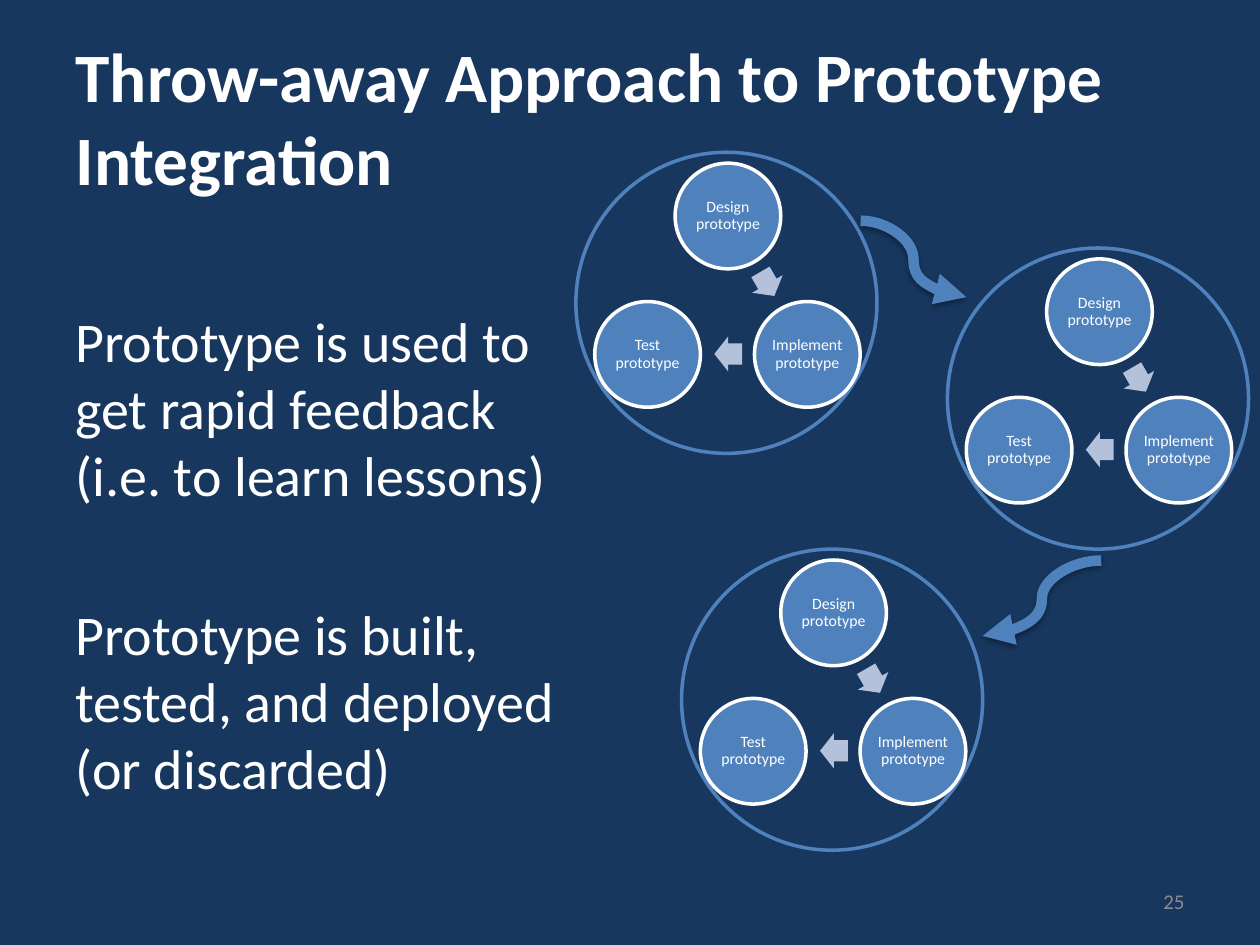
from lxml import etree
from pptx import Presentation
from pptx.dml.color import RGBColor
from pptx.enum.dml import MSO_LINE
from pptx.enum.shapes import MSO_CONNECTOR, MSO_SHAPE
from pptx.enum.text import MSO_ANCHOR, MSO_AUTO_SIZE, PP_ALIGN
from pptx.oxml import parse_xml
from pptx.oxml.ns import nsdecls, qn
from pptx.util import Cm, Pt

OVAL, ARROW = MSO_SHAPE.OVAL, MSO_SHAPE.RIGHT_ARROW
CURVE, SOLID = MSO_CONNECTOR.CURVE, MSO_LINE.SOLID
TOP, MIDDLE = MSO_ANCHOR.TOP, MSO_ANCHOR.MIDDLE
LEFT, CENTER, RIGHT = PP_ALIGN.LEFT, PP_ALIGN.CENTER, PP_ALIGN.RIGHT
NO_AUTOFIT = MSO_AUTO_SIZE.NONE
TITLE_ONLY = 5

COLORS = {
    "background": "17375E",
    "blue": "4F81BD",
    "pale": "B3C1DB",
    "white": "FFFFFF",
    "grey": "8C8C8C",
}
RING_SIZE, NODE_SIZE = 6.07, 2.13
RINGS = [(11.61, 3.07), (19.1, 5.0), (13.74, 11.07)]
NODES = [
    ("Design prototype", 2.0, 0.22),
    ("Implement prototype", 3.6, 3.01),
    ("Test prototype", 0.38, 3.01),
]
STEP_ARROWS = [(3.58, 2.3, 60), (2.79, 3.71, 180)]
RING_LINKS = [(17.35, 4.45, 19.48, 5.99), (22.2, 11.3, 19.81, 12.82)]
SHADOW = (
    f'<a:effectLst {nsdecls("a")}><a:outerShdw blurRad="40000" dist="23000" '
    'dir="5400000" rotWithShape="0"><a:srgbClr val="000000">'
    '<a:alpha val="35000"/></a:srgbClr></a:outerShdw></a:effectLst>'
)


def color(name):
    return RGBColor.from_string(COLORS[name])


def apply(target, **values):
    for name, value in values.items():
        setattr(target, name, value)


def place(shape, left, top, width, height):
    apply(shape, left=Cm(left), top=Cm(top), width=Cm(width), height=Cm(height))


def write(box, texts, size, ink="white", bold=False, anchor=TOP, **para_format):
    frame = box.text_frame
    apply(frame, word_wrap=True, auto_size=NO_AUTOFIT, vertical_anchor=anchor)
    for index, text in enumerate(texts):
        para = frame.add_paragraph() if index else frame.paragraphs[0]
        apply(para, **para_format)
        span = para.add_run()
        apply(span, text=text)
        apply(span.font, name="Calibri", size=Pt(size), bold=bold)
        span.font.color.rgb = color(ink)
    return frame


def add_figure(shapes, kind, left, top, width, height, fill=None, line=None):
    figure = shapes.add_shape(kind, Cm(left), Cm(top), Cm(width), Cm(height))
    figure.shadow.inherit = False
    if fill:
        figure.fill.solid()
        figure.fill.fore_color.rgb = color(fill)
    else:
        figure.fill.background()
    if line:
        figure.line.color.rgb = color(line)
        figure.line.width = Pt(2)
    else:
        figure.line.fill.background()
    return figure


def add_node(shapes, text, left, top):
    node = add_figure(shapes, OVAL, left, top, NODE_SIZE, NODE_SIZE, "blue", "white")
    frame = write(node, [text], 9, anchor=MIDDLE, alignment=CENTER,
                  line_spacing=0.9, space_after=Pt(3.15))
    for side in ("left", "top", "right", "bottom"):
        setattr(frame, f"margin_{side}", Cm(0.03))


def add_cycle(page, left, top):
    add_figure(page.shapes, OVAL, left, top, RING_SIZE, RING_SIZE, line="blue")
    cycle = page.shapes.add_group_shape()
    for text, dx, dy in NODES:
        add_node(cycle.shapes, text, left + dx, top + dy)
    for dx, dy, angle in STEP_ARROWS:
        arrow = add_figure(cycle.shapes, ARROW, left + dx, top + dy, 0.56, 0.71, "pale")
        arrow.rotation = angle
        arrow.adjustments[0] = 0.6
        arrow.adjustments[1] = 0.5


def add_link(page, *ends):
    link = page.shapes.add_connector(CURVE, *map(Cm, ends))
    link.line.color.rgb = color("blue")
    apply(link.line, width=Pt(6), dash_style=SOLID)
    outline = link.line._get_or_add_ln()
    etree.SubElement(outline, qn("a:tailEnd"), type="triangle")
    outline.addnext(parse_xml(SHADOW))


def add_text(page, texts, area, size, **options):
    box = page.shapes.add_textbox(0, 0, 0, 0)
    place(box, *area)
    return write(box, texts, size, **options)


def main():
    deck = Presentation()
    apply(deck, slide_width=Cm(25.4), slide_height=Cm(19.05))
    page = deck.slides.add_slide(deck.slide_layouts[TITLE_ONLY])
    page.background.fill.solid()
    page.background.fill.fore_color.rgb = color("background")

    title = page.shapes.title
    place(title, 1.27, 0.76, 22.86, 3.18)
    write(title, ["Throw-away Approach to Prototype Integration"], 39.6,
          bold=True, anchor=MIDDLE, alignment=LEFT)

    body = add_text(page, [
        "Prototype is used to get rapid feedback (i.e. to learn lessons)",
        "Prototype is built, tested, and deployed (or discarded)",
    ], (1.27, 4.45, 10.72, 14.22), 32)
    body.margin_top = Cm(1.73)
    body.paragraphs[1].space_before = Pt(52)

    for left, top in RINGS:
        add_cycle(page, left, top)
    for ends in RING_LINKS:
        add_link(page, *ends)
    add_text(page, ["25"], (18.21, 17.65, 5.92, 1.02), 12, ink="grey",
             anchor=MIDDLE, alignment=RIGHT)
    deck.save("out.pptx")


if __name__ == "__main__":
    main()
